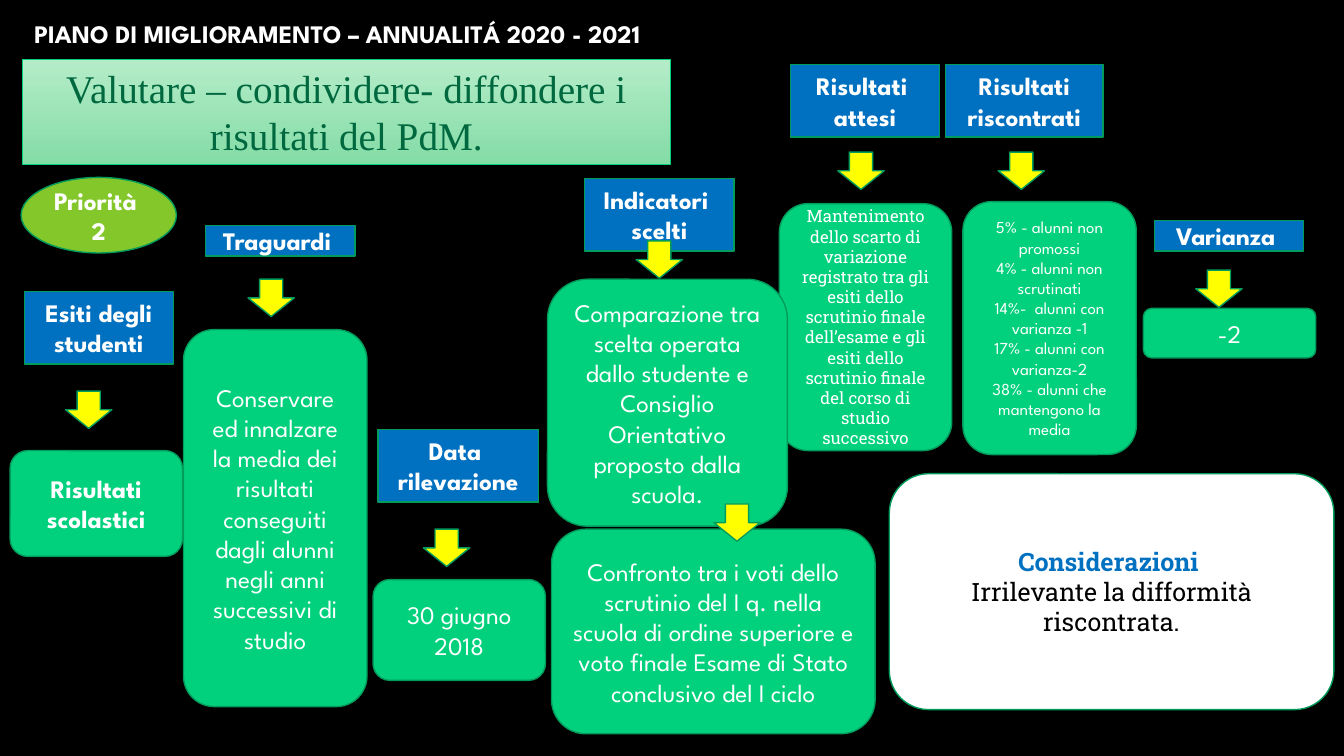
from pptx import Presentation
from pptx.dml.color import RGBColor
from pptx.enum.shapes import MSO_SHAPE as Shape
from pptx.enum.text import MSO_ANCHOR as Anchor, MSO_AUTO_SIZE as AutoSize, PP_ALIGN as Align
from pptx.util import Inches, Pt

SPARTAN, SLAB = "League Spartan", "Roboto Slab"
WHITE, BLACK, BLUE, GREEN = "FFFFFF", "000000", "0070C0", "01D17D"


def rgb(value):
    return RGBColor.from_string(value)


def add_block(kind, box, fill, lines=(), size=18, bold=False, font=SPARTAN, color=WHITE):
    block = slide.shapes.add_shape(kind, *[Inches(n) for n in box])
    block.shadow.inherit = False
    block.fill.solid()
    block.fill.fore_color.rgb = rgb(fill)
    block.line.color.rgb = rgb("019B5C")
    block.line.width = Pt(1)
    frame = block.text_frame
    frame.word_wrap = True
    frame.vertical_anchor = Anchor.MIDDLE
    for index, line in enumerate(lines):
        paragraph = frame.add_paragraph() if index else frame.paragraphs[0]
        paragraph.alignment = Align.CENTER
        run = paragraph.add_run()
        run.text = line
        for name, value in {"size": Pt(size), "bold": bold, "name": font}.items():
            setattr(run.font, name, value)
        run.font.color.rgb = rgb(color)
    return block


prs = Presentation()
prs.slide_width, prs.slide_height = Inches(13.33), Inches(7.5)
slide = prs.slides.add_slide(prs.slide_layouts[5])
slide.background.fill.solid()
slide.background.fill.fore_color.rgb = rgb(BLACK)

heading = slide.shapes.title
heading_box = {"left": 0.24, "top": 0.13, "width": 6.67, "height": 0.4}
for name, value in heading_box.items():
    setattr(heading, name, Inches(value))
heading_format = {"word_wrap": True, "auto_size": AutoSize.NONE, "vertical_anchor": Anchor.TOP}
for name, value in heading_format.items():
    setattr(heading.text_frame, name, value)
heading.text_frame.text = "PIANO DI MIGLIORAMENTO – ANNUALITÁ 2020 - 2021"
heading_line = heading.text_frame.paragraphs[0]
heading_line.alignment = Align.LEFT
for name, value in {"size": Pt(18), "bold": True, "name": SPARTAN}.items():
    setattr(heading_line.font, name, value)
heading_line.font.color.rgb = rgb(WHITE)

labels = [
    ((2.04, 2.24, 1.48, 0.3), ["Traguardi "]),
    ((5.8, 1.77, 1.48, 0.72), ["Indicatori ", "scelti"]),
    ((3.75, 4.26, 1.59, 0.72), ["Data ", "rilevazione"]),
    ((0.24, 2.89, 1.48, 0.72), ["Esiti degli studenti"]),
    ((11.45, 2.19, 1.48, 0.3), ["Varianza "]),
    ((9.38, 0.64, 1.56, 0.72), ["Risultati riscontrati"]),
    ((7.84, 0.64, 1.48, 0.72), ["Risultati ", "attesi"]),
]
for box, lines in labels:
    add_block(Shape.RECTANGLE, box, BLUE, lines, bold=True)

cards = [
    ((0.1, 4.47, 1.71, 1.05), ["Risultati scolastici"], {"bold": True}),
    ((1.82, 3.27, 1.82, 3.74), [
        "Conservare ed innalzare la media dei risultati conseguiti dagli alunni "
        "negli anni successivi di studio"], {}),
    ((3.7, 5.75, 1.71, 1), ["30 giugno 2018"], {}),
    ((7.73, 2.02, 1.71, 2.45), [
        "Mantenimento dello scarto di variazione registrato tra gli esiti dello "
        "scrutinio finale dell’esame e gli esiti dello scrutinio finale del corso "
        "di studio successivo"], {"size": 12, "font": SLAB}),
    ((9.55, 2, 1.72, 2.51), [
        "5% - alunni non promossi",
        "4% - alunni non scrutinati",
        "14%-  alunni con varianza -1",
        "17% - alunni con varianza-2",
        "38% - alunni che mantengono la media"], {"size": 12}),
    ((11.34, 3.06, 1.71, 0.49), ["-2"], {}),
    ((5.43, 2.77, 2.38, 2.45), [
        "Comparazione tra scelta operata dallo studente e Consiglio Orientativo "
        "proposto dalla scuola."], {}),
    ((5.47, 5.25, 3.21, 2.03), [
        "Confronto tra i voti dello scrutinio del I q. nella scuola di ordine "
        "superiore e voto finale Esame di Stato conclusivo del I ciclo"], {}),
]
for box, lines, style in cards:
    add_block(Shape.ROUNDED_RECTANGLE, box, GREEN, lines, **style)

remarks = add_block(
    Shape.ROUNDED_RECTANGLE, (8.82, 4.7, 4.41, 2.34), WHITE,
    ["Considerazioni ", "Irrilevante la difformità riscontrata."], font=SLAB, color=BLACK)
remarks_title = remarks.text_frame.paragraphs[0].runs[0].font
remarks_title.bold = True
remarks_title.color.rgb = rgb(BLUE)

arrows = [(0.65, 3.88), (2.46, 2.77), (4.2, 5.25), (6.31, 2.39),
          (8.31, 1.51), (9.9, 1.51), (11.86, 2.68), (7.08, 5)]
for left, top in arrows:
    add_block(Shape.DOWN_ARROW, (left, top, 0.46, 0.37), "FFFF00")

add_block(Shape.OVAL, (0.21, 1.76, 1.54, 0.75), "84C72A", ["Priorità ", "2"], bold=True)

goal = add_block(
    Shape.RECTANGLE, (0.22, 0.59, 6.43, 1.04), GREEN,
    ["Valutare – condividere- diffondere i risultati del PdM."],
    size=28, font="Times New Roman", color="00683F")
goal.text_frame.vertical_anchor = Anchor.TOP
goal.line.color.rgb = rgb(GREEN)
goal.line.width = Pt(0.75)
goal.fill.gradient()
goal.fill.gradient_angle = 270
for stop, (position, color) in zip(goal.fill.gradient_stops, [(0, "B4ECC8"), (1, "84DCA6")]):
    stop.position = position
    stop.color.rgb = rgb(color)

prs.save("out.pptx")
